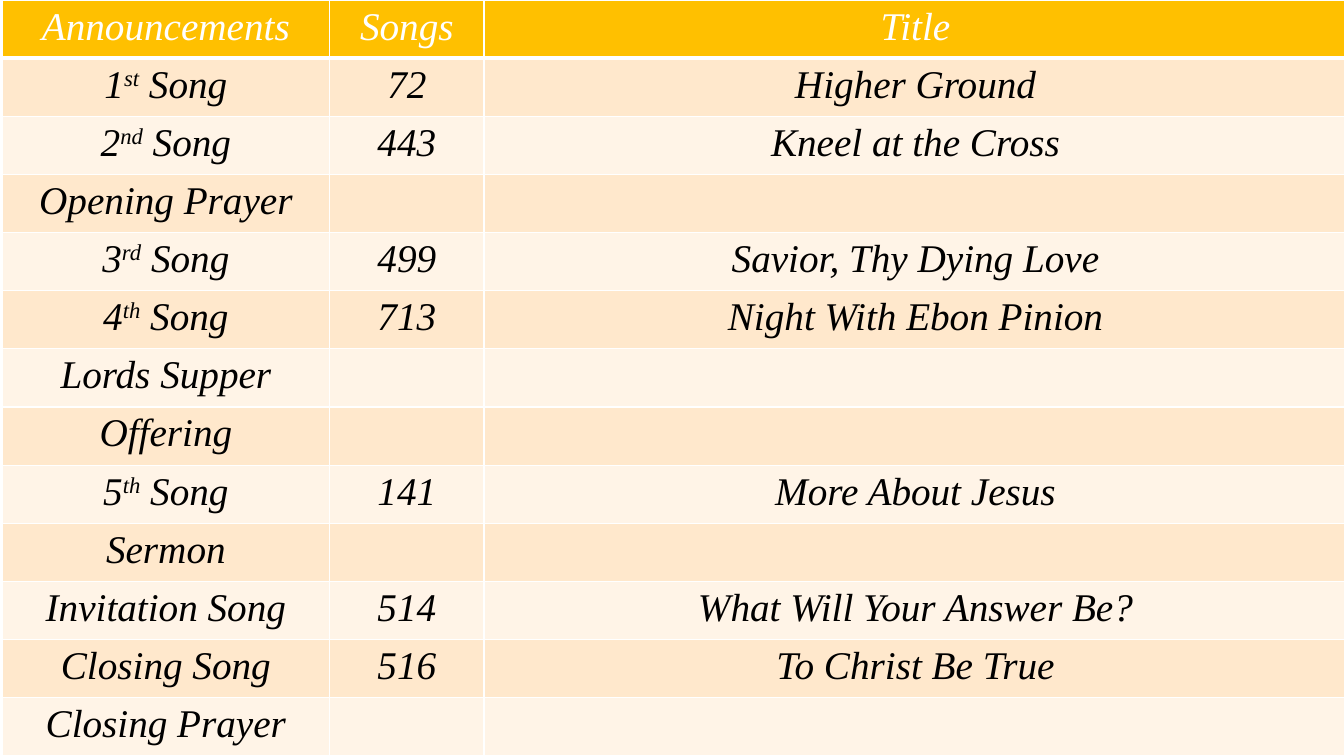
from lxml import etree
from pptx import Presentation
from pptx.dml.color import RGBColor
from pptx.enum.text import PP_ALIGN
from pptx.oxml.ns import qn
from pptx.util import Inches, Pt

CENTER = PP_ALIGN.CENTER
WHITE = RGBColor(0xFF, 0xFF, 0xFF)
BLACK = RGBColor(0x00, 0x00, 0x00)
GOLD = RGBColor(0xFF, 0xC0, 0x00)
PEACH = RGBColor(0xFF, 0xE8, 0xCC)
CREAM = RGBColor(0xFF, 0xF4, 0xE7)

COLUMN_WIDTHS = (3.25, 1.53, 8.56)
HEADINGS = ("Announcements", "Songs", "Title")

# Each step is a label, an ordinal ending to raise, a song number and a title
SERVICE = (
    ("1", "st", "72", "Higher Ground"),
    ("2", "nd", "443", "Kneel at the Cross"),
    ("Opening Prayer", "", "", ""),
    ("3", "rd", "499", "Savior, Thy Dying Love"),
    ("4", "th", "713", "Night With Ebon Pinion"),
    ("Lords Supper", "", "", ""),
    ("Offering", "", "", ""),
    ("5", "th", "141", "More About Jesus"),
    ("Sermon", "", "", ""),
    ("Invitation Song", "", "514", "What Will Your Answer Be?"),
    ("Closing Song", "", "516", "To Christ Be True"),
    ("Closing Prayer", "", "", ""),
)


class ServiceSlide:
    """Holds the text style and the current slide."""

    font_name = "Times New Roman"
    font_size = Pt(28)

    def __init__(self, presentation):
        self.slide = presentation.slides.add_slide(presentation.slide_layouts[6])

    def add_table(self, left, top, height, widths, row_count):
        frame = self.slide.shapes.add_table(
            row_count, len(widths), Inches(left), Inches(top),
            Inches(sum(widths)), Inches(height))
        table = frame.table
        table.first_row = False
        table.horz_banding = False
        for column, width in zip(table.columns, widths):
            column.width = Inches(width)
        for row in table.rows:
            row.height = Inches(height / row_count)
        return table

    def add_border(self, cell, side, points):
        properties = cell._tc.get_or_add_tcPr()
        line = etree.SubElement(properties, qn("a:ln" + side), w=str(Pt(points)))
        fill = etree.SubElement(line, qn("a:solidFill"))
        etree.SubElement(fill, qn("a:srgbClr"), val=str(WHITE))

    def add_run(self, paragraph, text, color, raised=False):
        run = paragraph.add_run()
        run.text = text
        font = run.font
        font.name = self.font_name
        font.size = self.font_size
        font.italic = True
        font.bold = False
        font.color.rgb = color
        if raised:
            run._r.get_or_add_rPr().set("baseline", "30000")

    def fill_cell(self, cell, runs, fill, color, bottom=1):
        for side, points in (("L", 1), ("R", 1), ("T", 1), ("B", bottom)):
            self.add_border(cell, side, points)
        cell.fill.solid()
        cell.fill.fore_color.rgb = fill
        paragraph = cell.text_frame.paragraphs[0]
        paragraph.alignment = CENTER
        for text, raised in runs:
            if text:
                self.add_run(paragraph, text, color, raised)


def main():
    presentation = Presentation()
    presentation.slide_width = Inches(13.33)
    presentation.slide_height = Inches(7.5)
    service_slide = ServiceSlide(presentation)
    table = service_slide.add_table(0.02, 0, 7.5, COLUMN_WIDTHS, len(SERVICE) + 1)

    # Heading row
    for column, heading in enumerate(HEADINGS):
        service_slide.fill_cell(
            table.cell(0, column), [(heading, False)], GOLD, WHITE, bottom=3)

    # Order of service, in alternating bands
    for row, (label, ordinal, number, title) in enumerate(SERVICE, start=1):
        band = PEACH if row % 2 else CREAM
        step = [(label, False)]
        if ordinal:
            step += [(ordinal, True), (" Song", False)]
        for column, runs in enumerate((step, [(number, False)], [(title, False)])):
            service_slide.fill_cell(table.cell(row, column), runs, band, BLACK)

    presentation.save("out.pptx")


if __name__ == "__main__":
    main()
